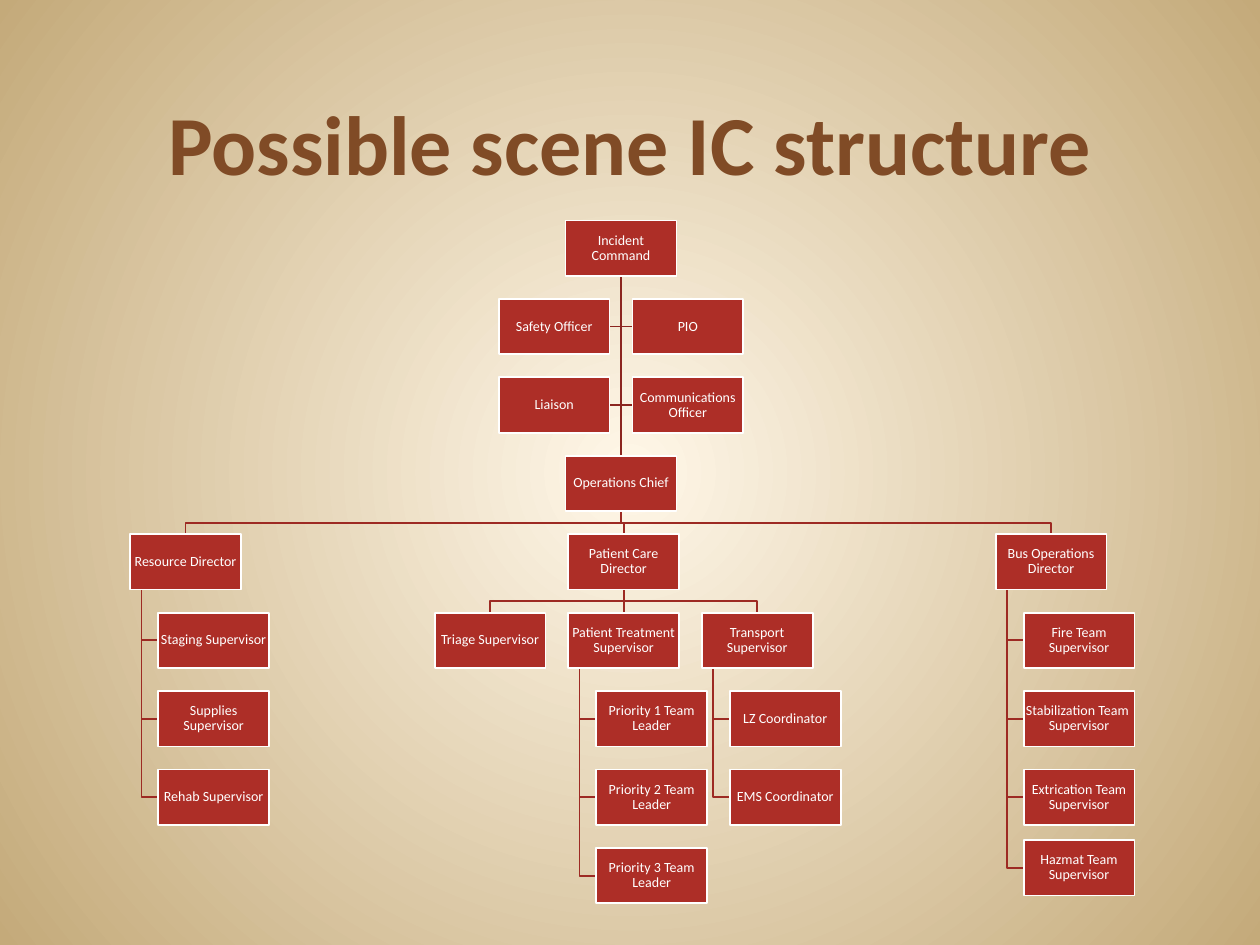
from lxml import etree
from pptx import Presentation
from pptx.dml.color import RGBColor
from pptx.enum.shapes import MSO_SHAPE
from pptx.enum.text import MSO_ANCHOR, MSO_AUTO_SIZE, PP_ALIGN
from pptx.oxml.ns import qn
from pptx.util import Inches, Pt

RECTANGLE = MSO_SHAPE.RECTANGLE
CENTER = PP_ALIGN.CENTER
MIDDLE, BOTTOM = MSO_ANCHOR.MIDDLE, MSO_ANCHOR.BOTTOM
NO_AUTOFIT = MSO_AUTO_SIZE.NONE

CREAM = RGBColor(0xFF, 0xF7, 0xE8)
SAND = RGBColor(0xC4, 0xAA, 0x7A)
BROWN = RGBColor(0x80, 0x4B, 0x26)
RED = RGBColor(0xAD, 0x2E, 0x27)
DARK_RED = RGBColor(0x9D, 0x2A, 0x23)
DEEP_RED = RGBColor(0x8B, 0x25, 0x1F)
WHITE = RGBColor(0xFF, 0xFF, 0xFF)
FONT = "Calibri"

# Grid in inches: column 0 is the patient care branch, row 0 the top box.
COL_0, COL_PITCH = 4.51, 1.06
ROW_0, ROW_PITCH = 1.75, (6.73 - 1.75) / 8
BOX_W, BOX_H = 0.88, 0.44
HANG_INSET = 0.09

COMMAND, RESOURCE, BUS = -0.02, -3.28, 3.2
ASSISTANTS = (COMMAND - 0.5, COMMAND + 0.5)
INDENT = 0.21

POSITIONS = {
    "Incident Command": (COMMAND, 0),
    "Operations Chief": (COMMAND, 3),
    "Resource Director": (RESOURCE, 4),
    "Staging Supervisor": (RESOURCE + INDENT, 5),
    "Supplies Supervisor": (RESOURCE + INDENT, 6),
    "Rehab Supervisor": (RESOURCE + INDENT, 7),
    "Patient Care Director": (0, 4),
    "Triage Supervisor": (-1, 5),
    "Patient Treatment Supervisor": (0, 5),
    "Priority 1 Team Leader": (INDENT, 6),
    "Priority 2 Team Leader": (INDENT, 7),
    "Priority 3 Team Leader": (INDENT, 8),
    "Transport Supervisor": (1, 5),
    "LZ Coordinator": (1 + INDENT, 6),
    "EMS Coordinator": (1 + INDENT, 7),
    "Bus Operations Director": (BUS, 4),
    "Fire Team Supervisor": (BUS + INDENT, 5),
    "Stabilization Team  Supervisor": (BUS + INDENT, 6),
    "Extrication Team Supervisor": (BUS + INDENT, 7),
    "Hazmat Team Supervisor": (BUS + INDENT, 7.9),
    "Safety Officer": (ASSISTANTS[0], 1),
    "PIO": (ASSISTANTS[1], 1),
    "Liaison": (ASSISTANTS[0], 2),
    "Communications Officer": (ASSISTANTS[1], 2),
}

ASSISTANT_LINKS = {
    "Incident Command": ["Safety Officer", "PIO", "Liaison", "Communications Officer"],
}
BRANCH_LINKS = {
    "Operations Chief": ["Resource Director", "Patient Care Director", "Bus Operations Director"],
    "Patient Care Director": ["Triage Supervisor", "Patient Treatment Supervisor",
                              "Transport Supervisor"],
}
HANGING_LINKS = {
    "Resource Director": ["Staging Supervisor", "Supplies Supervisor", "Rehab Supervisor"],
    "Patient Treatment Supervisor": ["Priority 1 Team Leader", "Priority 2 Team Leader",
                                     "Priority 3 Team Leader"],
    "Transport Supervisor": ["LZ Coordinator", "EMS Coordinator"],
    "Bus Operations Director": ["Fire Team Supervisor", "Stabilization Team  Supervisor",
                                "Extrication Team Supervisor", "Hazmat Team Supervisor"],
}


def corner(role):
    """Left and top of a role's box, in inches."""
    col, row = POSITIONS[role]
    return COL_0 + col * COL_PITCH, ROW_0 + row * ROW_PITCH


class OrgChart:
    """Holds the chart's style and the slide it is drawn on."""

    def __init__(self, slide):
        self.slide = slide

    def background(self, inner, outer):
        """Radial gradient from the slide's centre."""
        fill = self.slide.background.fill
        fill.gradient()
        for stop, color, position in zip(fill.gradient_stops, (inner, outer), (0, 1)):
            stop.color.rgb = color
            stop.position = position
        gradient = self.slide.element.find(".//" + qn("a:gradFill"))
        linear = gradient.find(qn("a:lin"))
        radial = etree.Element(qn("a:path"), {"path": "circle"})
        etree.SubElement(radial, qn("a:fillToRect"),
                         {side: "50000" for side in "ltrb"})
        gradient.replace(linear, radial)

    def add_text(self, frame, text, size, color, anchor, bold=False):
        frame.word_wrap = True
        frame.auto_size = NO_AUTOFIT
        frame.vertical_anchor = anchor
        paragraph = frame.paragraphs[0]
        paragraph.alignment = CENTER
        run = paragraph.add_run()
        run.text = text
        run.font.name, run.font.size, run.font.bold = FONT, Pt(size), bold
        run.font.color.rgb = color
        return paragraph

    def title(self, text):
        holder = self.slide.shapes.title
        holder.left, holder.top = Inches(0.5), Inches(0.33)
        holder.width, holder.height = Inches(9), Inches(1.25)
        self.add_text(holder.text_frame, text, 48, BROWN, BOTTOM, bold=True)

    def box(self, role):
        left, top = corner(role)
        box = self.slide.shapes.add_shape(
            RECTANGLE, Inches(left), Inches(top), Inches(BOX_W), Inches(BOX_H))
        box.shadow.inherit = False
        box.fill.solid()
        box.fill.fore_color.rgb = RED
        box.line.color.rgb = WHITE
        box.line.width = Pt(1)
        frame = box.text_frame
        frame.margin_left = frame.margin_right = Inches(0.01)
        frame.margin_top = frame.margin_bottom = Inches(0.01)
        self.add_text(frame, role, 8, WHITE, MIDDLE).line_spacing = 0.9

    def polyline(self, points, color):
        start, *rest = [(Inches(x), Inches(y)) for x, y in points]
        builder = self.slide.shapes.build_freeform(*start)
        builder.add_line_segments(rest, close=False)
        line = builder.convert_to_shape()
        line.shadow.inherit = False
        line.fill.background()
        line.line.color.rgb = color
        line.line.width = Pt(1)

    def side_link(self, start_x, parent, child, color):
        """Runs down from the parent, then across to the child's nearer side."""
        left, top = corner(child)
        end_x = left if left > start_x else left + BOX_W
        middle = top + BOX_H / 2
        self.polyline([(start_x, corner(parent)[1] + BOX_H),
                       (start_x, middle), (end_x, middle)], color)

    def assistant_link(self, parent, child):
        self.side_link(corner(parent)[0] + BOX_W / 2, parent, child, DEEP_RED)

    def hanging_link(self, parent, child):
        self.side_link(corner(parent)[0] + HANG_INSET, parent, child, DARK_RED)

    def branch_link(self, parent, child, color=DARK_RED):
        """Joins the parent's bottom centre to the child's top centre."""
        left, top = corner(parent)
        start_x, start_y = left + BOX_W / 2, top + BOX_H
        left, end_y = corner(child)
        end_x, middle = left + BOX_W / 2, (start_y + end_y) / 2
        points = [(start_x, start_y), (end_x, end_y)]
        if start_x != end_x:
            points[1:1] = [(start_x, middle), (end_x, middle)]
        self.polyline(points, color)


def main():
    deck = Presentation()
    deck.slide_width, deck.slide_height = Inches(10), Inches(7.5)
    chart = OrgChart(deck.slides.add_slide(deck.slide_layouts[5]))
    chart.background(CREAM, SAND)
    chart.title("Possible scene IC structure")

    for draw, links in ((chart.assistant_link, ASSISTANT_LINKS),
                        (chart.hanging_link, HANGING_LINKS),
                        (chart.branch_link, BRANCH_LINKS)):
        for parent, children in links.items():
            for child in children:
                draw(parent, child)
    chart.branch_link("Incident Command", "Operations Chief", DEEP_RED)

    for role in POSITIONS:
        chart.box(role)
    deck.save("out.pptx")


if __name__ == "__main__":
    main()
